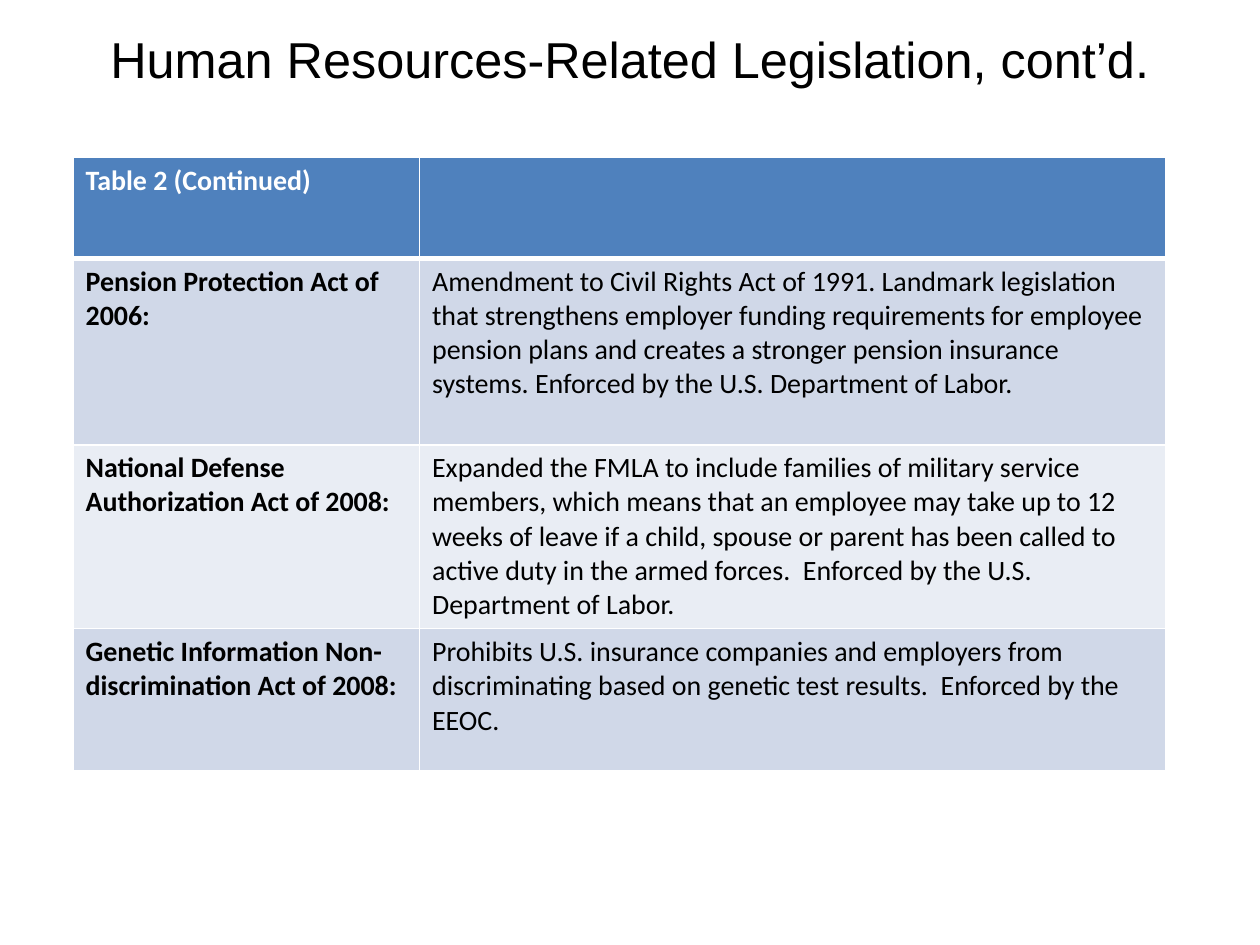
from lxml import etree
from pptx import Presentation
from pptx import util as u
from pptx.dml.color import RGBColor
from pptx.enum import text
from pptx.oxml import ns

COLORS = {"header": "4F81BD", "odd": "D0D8E8", "even": "E9EDF4",
          "white": "FFFFFF", "black": "000000"}
ROWS = [
    ("Table 2 (Continued)", ""),
    ("Pension Protection Act of 2006:",
     "Amendment to Civil Rights Act of 1991. Landmark legislation that "
     "strengthens employer funding requirements for employee pension plans "
     "and creates a stronger pension insurance systems. Enforced by the U.S. "
     "Department of Labor."),
    ("National Defense Authorization Act of 2008:",
     "Expanded the FMLA to include families of military service members, "
     "which means that an employee may take up to 12 weeks of leave if a "
     "child, spouse or parent has been called to active duty in the armed "
     "forces.  Enforced by the U.S. Department of Labor."),
    ("Genetic Information Non-discrimination Act of 2008:",
     "Prohibits U.S. insurance companies and employers from discriminating "
     "based on genetic test results.  Enforced by the EEOC."),
]
WIDTHS = [2.75, 5.92]
HEIGHTS = [0.8, 1.48, 1.46, 1.13]


def style(font, color, **fmt):
    for name, value in fmt.items():
        setattr(font, name, value)
    font.color.rgb = RGBColor.from_string(COLORS[color])


def add_borders(cell, widths):
    tcPr = cell._tc.get_or_add_tcPr()
    for side, width in widths.items():
        ln = etree.SubElement(tcPr, ns.qn(f"a:ln{side}"), w=str(u.Pt(width)))
        fill = etree.SubElement(ln, ns.qn("a:solidFill"))
        etree.SubElement(fill, ns.qn("a:srgbClr"), val=COLORS["white"])


prs = Presentation()
prs.slide_width, prs.slide_height = u.Inches(10), u.Inches(7.5)
s = prs.slides.add_slide(prs.slide_layouts[5])

title = s.shapes.title
box = {"left": 0.5, "top": 0, "width": 9, "height": 0.92}
for name, value in box.items():
    setattr(title, name, u.Inches(value))
tf = title.text_frame
tf.text = "Human Resources-Related Legislation, cont’d."
tf.vertical_anchor = text.MSO_ANCHOR.MIDDLE
p = tf.paragraphs[0]
p.alignment = text.PP_ALIGN.CENTER
style(p.runs[0].font, "black", name="Arial", size=u.Pt(28.8))

table = s.shapes.add_table(
    len(ROWS), len(WIDTHS), u.Inches(0.58), u.Inches(1.25),
    u.Inches(sum(WIDTHS)), u.Inches(sum(HEIGHTS))).table
for col, width in zip(table.columns, WIDTHS):
    col.width = u.Inches(width)

for i, (row, height, texts) in enumerate(zip(table.rows, HEIGHTS, ROWS)):
    row.height = u.Inches(height)
    band = "header" if i == 0 else "odd" if i % 2 else "even"
    for j, (cell, content) in enumerate(zip(row.cells, texts)):
        add_borders(cell, {"L": 1, "R": 1, "T": 3 if i == 1 else 1,
                           "B": 3 if i == 0 else 1})
        cell.fill.solid()
        cell.fill.fore_color.rgb = RGBColor.from_string(COLORS[band])
        if content:
            r = cell.text_frame.paragraphs[0].add_run()
            r.text = content
            style(r.font, "white" if i == 0 else "black",
                  name="Calibri", size=u.Pt(16), bold=j == 0)

prs.save("out.pptx")
